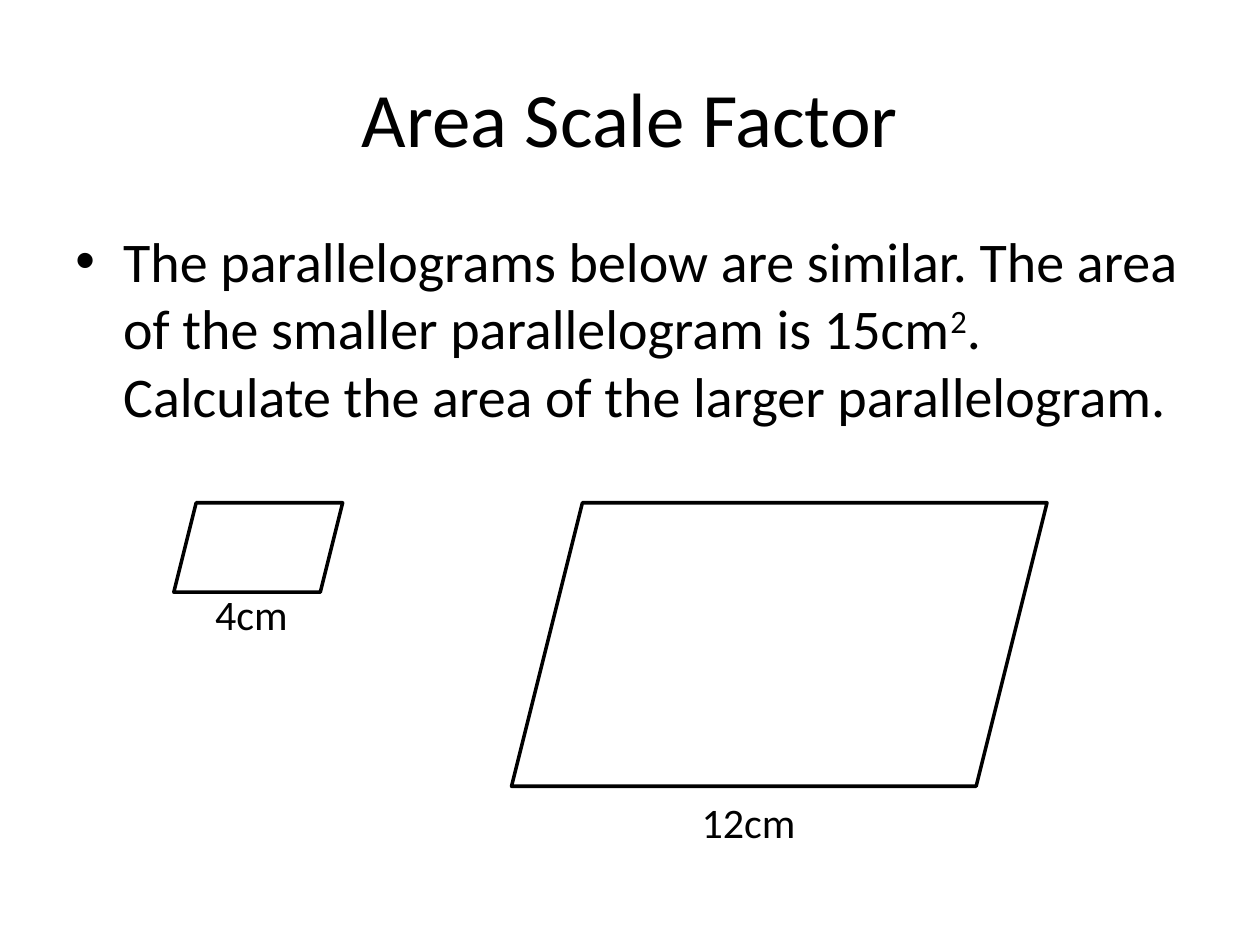
from lxml.etree import SubElement
from pptx import Presentation
from pptx.dml.color import RGBColor
from pptx.enum.shapes import MSO_SHAPE
from pptx.enum.text import MSO_ANCHOR, PP_ALIGN
from pptx.oxml.ns import qn
from pptx.util import Inches, Pt

BLACK = RGBColor(0, 0, 0)
FONT = "Calibri"
MARGIN = 0.5
CONTENT_WIDTH = 10 - 2 * MARGIN
INDENT = Inches(0.38)
SHAPE_TOP = 3.99

deck = Presentation()
deck.slide_width = Inches(10)
deck.slide_height = Inches(7.5)
page = deck.slides.add_slide(deck.slide_layouts[6])


def add_span(para, text, size):
    span = para.add_run()
    span.text = text
    span.font.name = FONT
    span.font.size = Pt(size)
    span.font.color.rgb = BLACK
    return span


def add_box(left, top, width, height):
    box = page.shapes.add_textbox(Inches(left), Inches(top), Inches(width), Inches(height))
    box.text_frame.word_wrap = True
    return box.text_frame


title = add_box(MARGIN, 0.3, CONTENT_WIDTH, 1.25)
title.vertical_anchor = MSO_ANCHOR.MIDDLE
title.paragraphs[0].alignment = PP_ALIGN.CENTER
add_span(title.paragraphs[0], "Area Scale Factor", 44)

question = add_box(MARGIN, 1.75, CONTENT_WIDTH, 4.95).paragraphs[0]
question.space_before = Pt(6.4)
properties = question._p.get_or_add_pPr()
properties.set("marL", str(INDENT))
properties.set("indent", str(-INDENT))
SubElement(properties, qn("a:buFont"), typeface="Arial")
SubElement(properties, qn("a:buChar"), char="•")
add_span(question, "The parallelograms below are similar. The area of the smaller parallelogram is 15cm", 32)
square = add_span(question, "2", 32)
square.font._element.set("baseline", "30000")
add_span(question, ". Calculate the area of the larger parallelogram.", 32)

for left, width, height, label, label_left, label_top, label_width in (
    (1.38, 1.34, 0.71, "4cm", 1.61, 4.62, 0.94),
    (4.06, 4.25, 2.25, "12cm", 5.47, 6.27, 1.1),
):
    parallelogram = page.shapes.add_shape(
        MSO_SHAPE.PARALLELOGRAM, Inches(left), Inches(SHAPE_TOP), Inches(width), Inches(height)
    )
    parallelogram.shadow.inherit = False
    parallelogram.fill.background()
    parallelogram.line.color.rgb = BLACK
    parallelogram.line.width = Pt(2)
    caption = add_box(label_left, label_top, label_width, 0.5)
    add_span(caption.paragraphs[0], label, 24)

deck.save("out.pptx")
